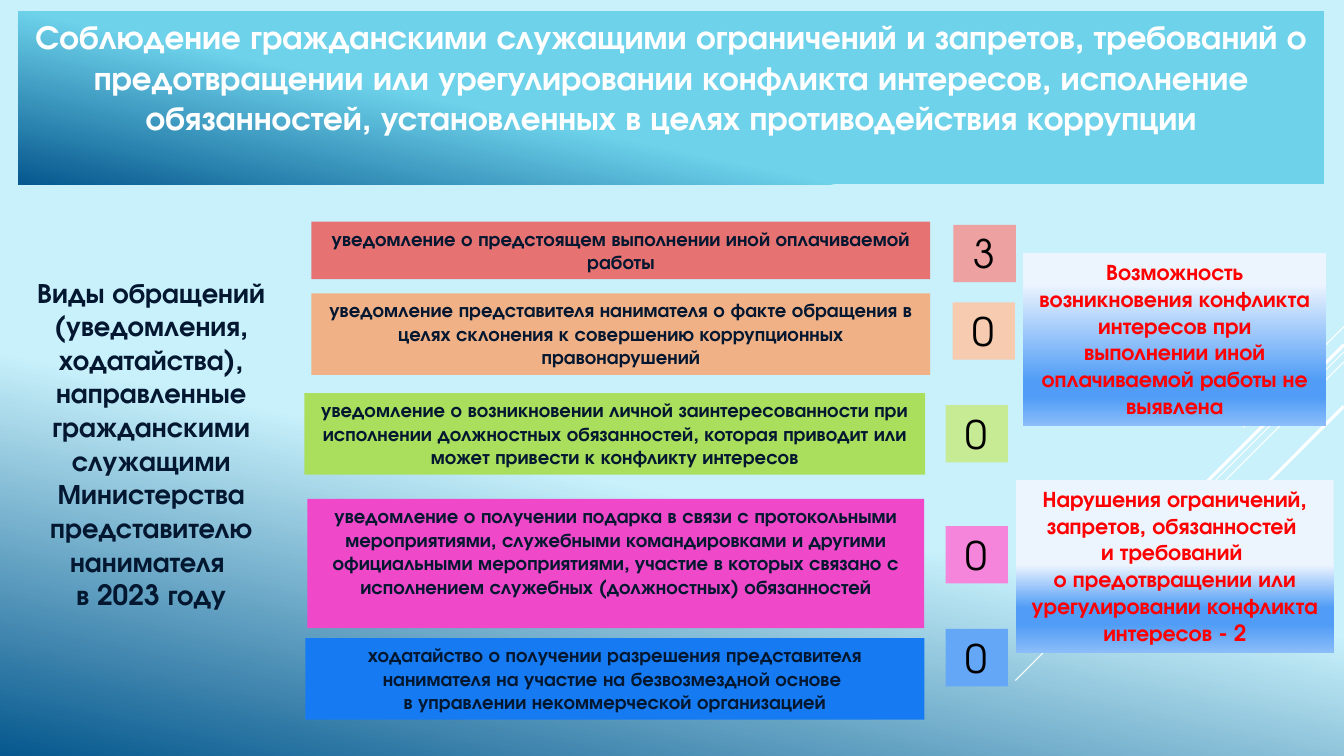
from dataclasses import dataclass

import lxml.etree
import pptx
import pptx.dml.color
import pptx.enum.shapes
import pptx.enum.text
import pptx.oxml.ns
import pptx.util

FONT = "TeX Gyre Adventor"
SLIDE_WIDTH, SLIDE_HEIGHT = 960, 540
COUNT_WIDTH, COUNT_HEIGHT = 44.6, 41
CONCLUSION_HEIGHT = 123.8

COLOURS = {
    "sky": "C8F1FB", "deep": "06588E", "banner": "6ED2EB",
    "white": "FFFFFF", "navy": "031730", "black": "000000", "red": "FF0000",
    "coral": "E67272", "light coral": "EEA1A1",
    "peach": "F1B187", "light peach": "F6CBAF",
    "lime": "AADF5E", "light lime": "C7EA94",
    "pink": "EF48C9", "light pink": "F585DB",
    "blue": "167BF3", "light blue": "64A7F7",
    "ice": "ECF4FE", "azure": "509CF6", "pale azure": "8BBDF9",
}


@dataclass(frozen=True)
class TextStyle:
    size: float
    colour: str
    bold: bool = True


@dataclass(frozen=True)
class Frame:
    left: float
    top: float
    width: float
    height: float

    def lengths(self) -> list[int]:
        return [pptx.util.Pt(value) for value in (self.left, self.top, self.width, self.height)]


@dataclass(frozen=True)
class Notice:
    frame: Frame
    colour: str
    text: str
    count: str
    count_left: float
    count_top: float


@dataclass(frozen=True)
class Conclusion:
    left: float
    top: float
    width: float
    ice_until: int
    text: str


@dataclass(frozen=True)
class Ray:
    top: float
    reach: float
    weight: float


TITLE_STYLE = TextStyle(24, "white")
KINDS_STYLE = TextStyle(20, "navy")
NOTICE_STYLE = TextStyle(14, "navy")
COUNT_STYLE = TextStyle(28, "black", False)
CONCLUSION_STYLE = TextStyle(16, "red")

TITLE = ("Соблюдение гражданскими служащими ограничений и запретов, требований о "
         "предотвращении или урегулировании конфликта интересов, исполнение "
         "обязанностей, установленных в целях противодействия коррупции")
KINDS = ("Виды обращений (уведомления, ходатайства), направленные гражданскими "
         "служащими Министерства представителю нанимателя \vв 2023 году")

NOTICES = [
    Notice(Frame(222.5, 158.4, 442, 41), "coral",
           "уведомление о предстоящем выполнении иной оплачиваемой работы",
           "3", 681, 160.6),
    Notice(Frame(222.5, 209.5, 442, 58.3), "peach",
           "уведомление представителя нанимателя о факте обращения в целях "
           "склонения к совершению коррупционных правонарушений",
           "0", 680.4, 216),
    Notice(Frame(217.4, 280.8, 443.5, 58.3), "lime",
           "уведомление о возникновении личной заинтересованности при исполнении "
           "должностных обязанностей, которая приводит или может привести к "
           "конфликту интересов",
           "0", 675.4, 289.4),
    Notice(Frame(219.6, 356.4, 440.6, 92.2), "pink",
           "уведомление о получении подарка в связи с протокольными мероприятиями, "
           "служебными командировками и другими официальными мероприятиями, участие "
           "в которых связано с исполнением служебных (должностных) обязанностей",
           "0", 675.4, 375.8),
    Notice(Frame(218.2, 455.8, 442, 58.3), "blue",
           "ходатайство о получении разрешения представителя нанимателя на участие "
           "на безвозмездной основе \vв управлении некоммерческой организацией",
           "0", 675.4, 449.3),
]

CONCLUSIONS = [
    Conclusion(730.8, 180.7, 216.7, 18,
               "Возможность возникновения конфликта интересов при выполнении иной "
               "оплачиваемой работы не выявлена"),
    Conclusion(725.8, 342.7, 226.8, 49,
               "Нарушения ограничений, запретов, обязанностей \vи требований "
               "\vо предотвращении или урегулировании конфликта интересов - 2"),
]

RAYS = [Ray(233.3, 72, 0.75), Ray(251.3, 234.7, 0.75), Ray(258.5, 149, 0.75),
        Ray(246.2, 137.5, 2.25), Ray(290.2, 100, 2.25)]


def colour(name: str) -> pptx.dml.color.RGBColor:
    return pptx.dml.color.RGBColor.from_string(COLOURS[name])


def apply_gradient(owner, element, stops: list[tuple[int, str]], angle: int) -> None:
    owner.fill.gradient()
    owner.fill.gradient_angle = 360 - angle
    qualified = pptx.oxml.ns.qn
    stop_list = element.xpath(".//a:gradFill/a:gsLst")[0]
    for child in list(stop_list):
        stop_list.remove(child)
    for position, name in stops:
        stop = lxml.etree.SubElement(stop_list, qualified("a:gs"), pos=str(position * 1000))
        lxml.etree.SubElement(stop, qualified("a:srgbClr"), val=COLOURS[name])


def write_text(shape, text: str, style: TextStyle) -> None:
    text_frame = shape.text_frame
    text_frame.text = text
    text_frame.word_wrap = True
    text_frame.auto_size = pptx.enum.text.MSO_AUTO_SIZE.NONE
    text_frame.vertical_anchor = pptx.enum.text.MSO_ANCHOR.TOP
    for paragraph in text_frame.paragraphs:
        paragraph.alignment = pptx.enum.text.PP_ALIGN.CENTER
        for run in paragraph.runs:
            run.font.name = FONT
            run.font.size = pptx.util.Pt(style.size)
            run.font.bold = style.bold
            run.font.color.rgb = colour(style.colour)


def add_box(slide, frame: Frame, text: str, style: TextStyle, fill: str | None = None):
    shape = slide.shapes.add_shape(pptx.enum.shapes.MSO_SHAPE.RECTANGLE, *frame.lengths())
    shape.shadow.inherit = False
    shape.line.fill.background()
    if fill:
        shape.fill.solid()
        shape.fill.fore_color.rgb = colour(fill)
    write_text(shape, text, style)
    return shape


def add_ray(slide, ray: Ray) -> None:
    ends = (SLIDE_WIDTH, ray.top, SLIDE_WIDTH - ray.reach, ray.top + ray.reach)
    connector = slide.shapes.add_connector(
        pptx.enum.shapes.MSO_CONNECTOR.STRAIGHT, *[pptx.util.Pt(value) for value in ends])
    connector.line.color.rgb = colour("white")
    connector.line.width = pptx.util.Pt(ray.weight)
    lxml.etree.SubElement(connector._element.spPr, pptx.oxml.ns.qn("a:effectLst"))


def main() -> None:
    presentation = pptx.Presentation()
    presentation.slide_width = pptx.util.Pt(SLIDE_WIDTH)
    presentation.slide_height = pptx.util.Pt(SLIDE_HEIGHT)
    slide = presentation.slides.add_slide(presentation.slide_layouts.get_by_name("Title Only"))
    apply_gradient(slide.background, slide._element, [(61, "sky"), (100, "deep")], 102)

    for ray in RAYS:
        add_ray(slide, ray)

    title = slide.shapes.title
    title.left, title.top, title.width, title.height = Frame(13, 8, 933, 123.8).lengths()
    apply_gradient(title, title._element, [(61, "banner"), (100, "deep")], 102)
    write_text(title, TITLE, TITLE_STYLE)

    kinds = slide.shapes.add_textbox(*Frame(13, 193, 190, 273.6).lengths())
    write_text(kinds, KINDS, KINDS_STYLE)

    for notice in NOTICES:
        add_box(slide, notice.frame, notice.text, NOTICE_STYLE, notice.colour)
        count_frame = Frame(notice.count_left, notice.count_top, COUNT_WIDTH, COUNT_HEIGHT)
        add_box(slide, count_frame, notice.count, COUNT_STYLE, f"light {notice.colour}")

    for conclusion in CONCLUSIONS:
        frame = Frame(conclusion.left, conclusion.top, conclusion.width, CONCLUSION_HEIGHT)
        shape = add_box(slide, frame, conclusion.text, CONCLUSION_STYLE)
        stops = [(conclusion.ice_until, "ice"), (74, "azure"), (83, "azure"), (100, "pale azure")]
        apply_gradient(shape, shape._element, stops, 90)

    presentation.save("out.pptx")


if __name__ == "__main__":
    main()
